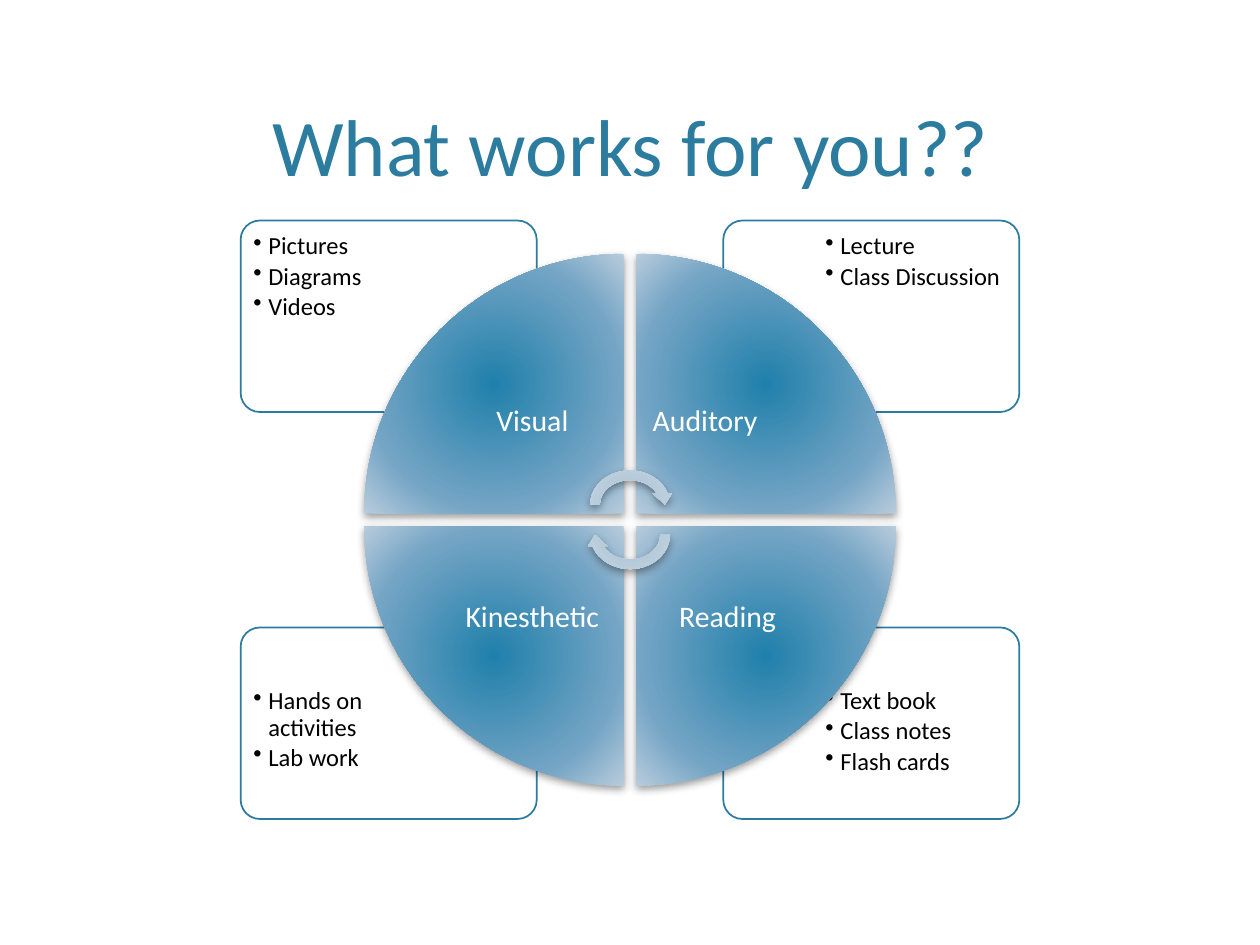
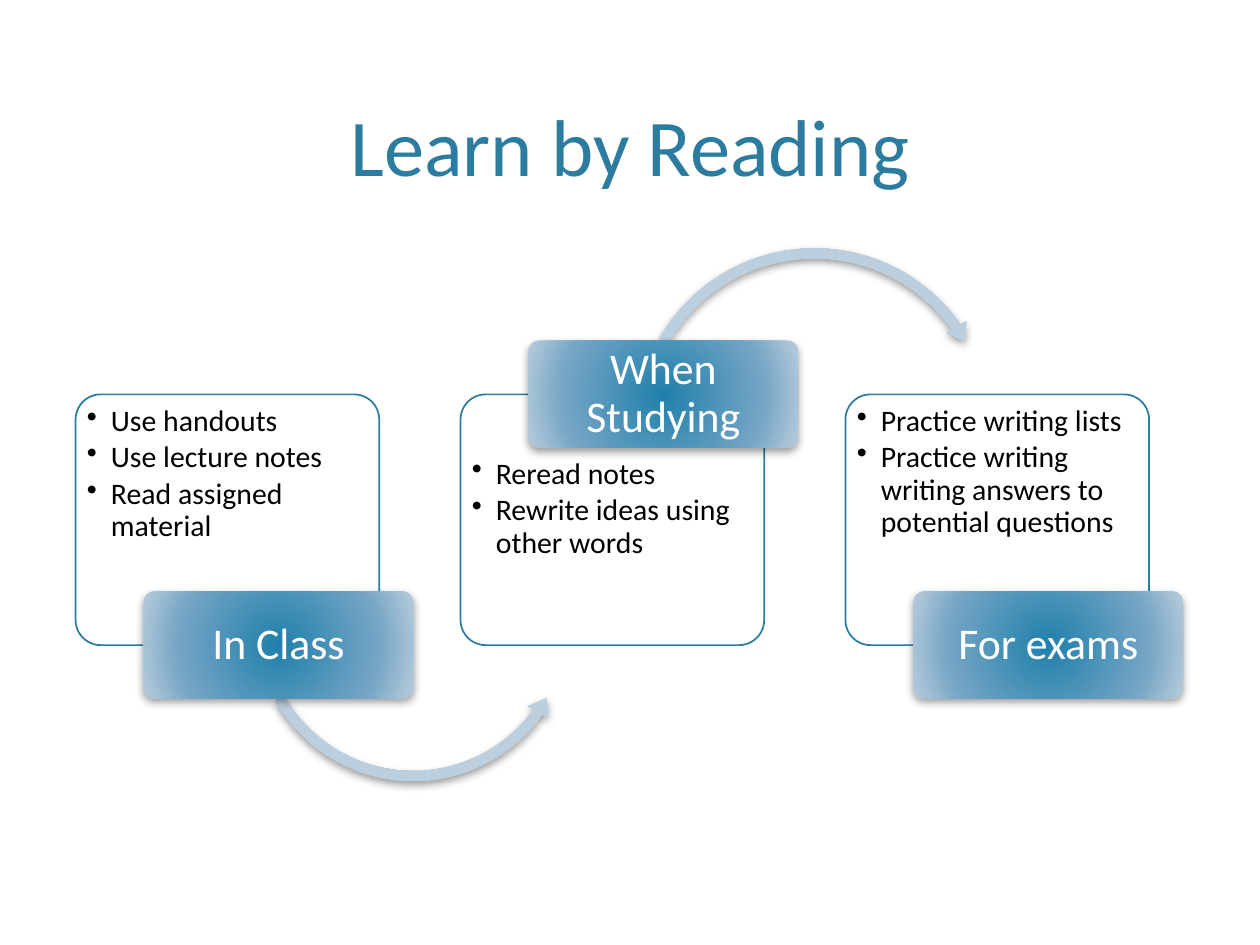
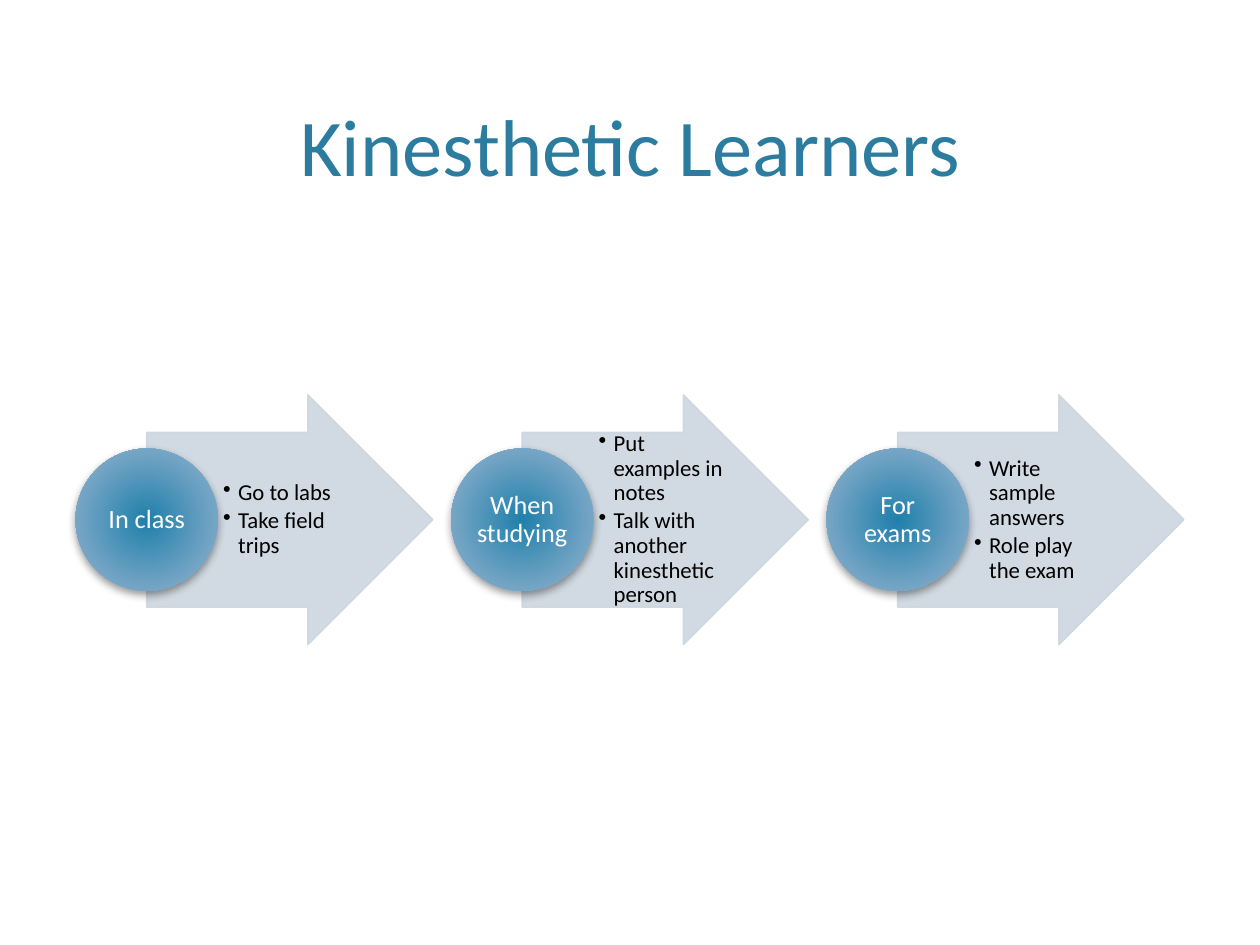
import pptx
import pptx.dml.color
import pptx.enum.shapes
import pptx.enum.text
import pptx.oxml
import pptx.oxml.ns
import pptx.util

SHAPES = pptx.enum.shapes.MSO_SHAPE
ALIGN = pptx.enum.text.PP_ALIGN
ANCHOR = pptx.enum.text.MSO_ANCHOR

STYLES_TITLE = "What works for you??"
STYLES = [
    {"name": "Visual", "side": (0, 0), "turn": 0, "align": ALIGN.CENTER,
     "points": ["Pictures", "Diagrams", "Videos"]},
    {"name": "Auditory", "side": (1, 0), "turn": 90, "align": ALIGN.LEFT,
     "points": ["Lecture", "Class Discussion"]},
    {"name": "Kinesthetic", "side": (0, 1), "turn": 270, "align": ALIGN.CENTER,
     "points": ["Hands on activities", "Lab work"]},
    {"name": "Reading", "side": (1, 1), "turn": 180, "align": ALIGN.CENTER,
     "points": ["Text book", "Class notes", "Flash cards"]},
]

READING_TITLE = "Learn by Reading"
READING_STEPS = [
    {"name": "In Class", "tag_on_top": False,
     "points": ["Use handouts", "Use lecture notes", "Read assigned material"],
     "loop": (SHAPES.LEFT_CIRCULAR_ARROW, (1.97, 3.63, 2.62, 2.62),
              (0.03, 3.69, 21.45, 90.25, 0.035))},
    {"name": "When Studying", "tag_on_top": True,
     "points": ["Reread notes", "Rewrite ideas using other words"],
     "loop": (SHAPES.CIRCULAR_ARROW, (5, 1.92, 2.93, 2.93),
              (0.027, 3.28, 194.97, 125.76, 0.031))},
    {"name": "For exams", "tag_on_top": False,
     "points": ["Practice writing lists",
                "Practice writing writing answers to potential questions"],
     "loop": None},
]

KINESTHETIC_TITLE = "Kinesthetic Learners"
KINESTHETIC_STEPS = [
    ("In class", ["Go to labs", "Take field trips"]),
    ("When studying", ["Put examples in notes", "Talk with another kinesthetic person"]),
    ("For exams", ["Write sample answers", "Role play the exam"]),
]

THEME = {
    "font": "Calibri",
    "accent": "2C7C9F",
    "ink": "000000",
    "paper": "FFFFFF",
    "pale": "CDD7DF",
    "deep_glow": [(0, "2080AB"), (69, "75A5C5"), (100, "B8CCDC")],
    "pale_glow": [(0, "AABFD0"), (69, "BCCFDE"), (100, "D8E2EB")],
    "title_size": 46,
    "wheel": {"label": 17, "list": 14},
    "steps": {"label": 25, "list": 17},
    "arrows": {"label": 15, "list": 13},
}
WIDTH, HEIGHT = 10, 7.5
MARGIN = 0.6


def rgb(value):
    return pptx.dml.color.RGBColor.from_string(value)


def inches(box):
    return [pptx.util.Inches(length) for length in box]


def assign(target, values):
    for key, value in values.items():
        setattr(target, key, value)


def xml(tag, attributes="", inner=""):
    return pptx.oxml.parse_xml(
        f'<a:{tag} {pptx.oxml.ns.nsdecls("a")} {attributes}>{inner}</a:{tag}>')


def style_font(paragraph, size, color):
    assign(paragraph.font, {"size": pptx.util.Pt(size), "name": THEME["font"]})
    paragraph.font.color.rgb = rgb(color)


def titled_slide(deck, title):
    slide = deck.slides.add_slide(deck.slide_layouts[5])
    heading = slide.shapes.title
    assign(heading, dict(zip(("left", "top", "width", "height"),
                             inches((MARGIN, 0.12, WIDTH - 2 * MARGIN, 1.46)))))
    heading.text_frame.text = title
    heading.text_frame.vertical_anchor = ANCHOR.BOTTOM
    heading.text_frame.paragraphs[0].alignment = ALIGN.CENTER
    style_font(heading.text_frame.paragraphs[0], THEME["title_size"], THEME["accent"])
    return slide


def add_form(slide, kind, box, adjustments=()):
    form = slide.shapes.add_shape(kind, *inches(box))
    form.shadow.inherit = False
    for index, value in enumerate(adjustments):
        form.adjustments[index] = value
    return form


def add_flat(slide, kind, box, adjustments, fill, line, line_alpha=100):
    form = add_form(slide, kind, box, adjustments)
    form.fill.solid()
    form.fill.fore_color.rgb = rgb(fill)
    form.line.color.rgb = rgb(line)
    form.line.width = pptx.util.Pt(1)
    colors = form._element.spPr.iter(pptx.oxml.ns.qn("a:srgbClr"))
    for color, alpha in zip(list(colors), (90, line_alpha)):
        color.append(xml("alpha", f'val="{alpha * 1000}"'))


def add_glowing(slide, kind, box, glow, adjustments=(), turn=0):
    form = add_form(slide, kind, box, adjustments)
    form.rotation = turn
    form.line.fill.background()
    form.fill.background()
    properties = form._element.spPr
    stops = "".join(f'<a:gs pos="{at * 1000}"><a:srgbClr val="{color}"/></a:gs>'
                    for at, color in THEME[glow])
    target = " ".join(f'{edge}="100000"' for edge in "ltrb")
    gradient = xml("gradFill", 'rotWithShape="1"',
                   f'<a:gsLst>{stops}</a:gsLst><a:path path="circle">'
                   f'<a:fillToRect {target}/></a:path>')
    properties.replace(properties.find(pptx.oxml.ns.qn("a:noFill")), gradient)
    properties.find(pptx.oxml.ns.qn("a:effectLst")).append(xml(
        "outerShdw", 'blurRad="63500" dist="25400" dir="5400000" rotWithShape="0"',
        f'<a:srgbClr val="{THEME["ink"]}"><a:alpha val="40000"/></a:srgbClr>'))


def add_text(slide, box, lines, size, color, insets, anchor, align):
    frame = slide.shapes.add_textbox(*inches(box)).text_frame
    assign(frame, {"word_wrap": True, "vertical_anchor": anchor})
    sides = ("margin_left", "margin_top", "margin_right", "margin_bottom")
    assign(frame, dict(zip(sides, inches(insets))))
    frame.text = "\n".join(lines)
    for paragraph in frame.paragraphs:
        assign(paragraph, {"alignment": align, "line_spacing": 0.9})
        style_font(paragraph, size, color)
    return frame


def add_label(slide, box, name, size, insets, align=ALIGN.CENTER):
    add_text(slide, box, [name], size, THEME["paper"], insets, ANCHOR.MIDDLE, align)


def add_list(slide, box, points, size, insets, indent, anchor=ANCHOR.TOP):
    frame = add_text(slide, box, points, size, THEME["ink"], insets, anchor, ALIGN.LEFT)
    hang = pptx.util.Inches(indent)
    for paragraph in frame.paragraphs:
        paragraph.space_after = pptx.util.Pt(size * 0.15)
        properties = paragraph._p.get_or_add_pPr()
        properties.set("marL", str(hang))
        properties.set("indent", str(-hang))
        properties.insert_element_before(xml("buChar", 'char="•"'), "a:tabLst", "a:defRPr")


def add_card(slide, box):
    add_flat(slide, SHAPES.ROUNDED_RECTANGLE, box, (0.1,), THEME["paper"], THEME["accent"])


def build_wheel(deck):
    slide = titled_slide(deck, STYLES_TITLE)
    hub = (WIDTH / 2, HEIGHT * 0.55)
    sizes = THEME["wheel"]

    def around_hub(side, gaps, extent):
        corner = [middle + gap if far else middle - gap - length
                  for middle, far, gap, length in zip(hub, side, gaps, extent)]
        return (*corner, *extent)

    for style in reversed(STYLES):
        add_card(slide, around_hub(style["side"], (0.74, 0.855), (2.35, 1.52)))
        add_list(slide, around_hub(style["side"], (1.48, 1.27), (1.58, 1.07)),
                 style["points"], sizes["list"], (0.07,) * 4, 0.12)
    for style in STYLES:
        add_glowing(slide, SHAPES.PIE_WEDGE,
                    around_hub(style["side"], (0.05, 0.05), (2.06, 2.06)),
                    "deep_glow", turn=style["turn"])
        add_label(slide, around_hub(style["side"], (0.05, 0.05), (1.45, 1.45)),
                  style["name"], sizes["label"], (0.13,) * 4, style["align"])
    width, height = 0.71, 0.62
    for shift, turn in ((-0.12, 0), (0.12, 180)):
        box = (hub[0] - width / 2, hub[1] + shift - height / 2, width, height)
        add_glowing(slide, SHAPES.CIRCULAR_ARROW, box, "pale_glow", turn=turn)


def build_reading(deck):
    slide = titled_slide(deck, READING_TITLE)
    top, width, height, pitch = 3.13, 2.41, 1.99, 3.055
    tag_width, tag_height = 2.14, 0.85
    sizes = THEME["steps"]
    for column, step in enumerate(READING_STEPS):
        left = MARGIN + column * pitch
        edge = top if step["tag_on_top"] else top + height
        list_top = top + (0.47 if step["tag_on_top"] else 0.05)
        tag = (left + 0.54, edge - tag_height / 2, tag_width, tag_height)
        add_card(slide, (left, top, width, height))
        add_list(slide, (left + 0.05, list_top, 2.32, 1.47), step["points"],
                 sizes["list"], (0.04,) * 4, 0.19)
        if step["loop"]:
            kind, box, adjustments = step["loop"]
            add_glowing(slide, kind, box, "pale_glow", adjustments)
        add_glowing(slide, SHAPES.ROUNDED_RECTANGLE, tag, "deep_glow", (0.1,))
        add_label(slide, tag, step["name"], sizes["label"], (0.07, 0.05, 0.07, 0.05))


def build_kinesthetic(deck):
    slide = titled_slide(deck, KINESTHETIC_TITLE)
    pitch, middle, disc = 2.98, HEIGHT * 0.55, 1.13
    sizes = THEME["arrows"]

    def centred(left, width, height):
        return (left, middle - height / 2, width, height)

    for column, (name, points) in enumerate(KINESTHETIC_STEPS):
        left = MARGIN + column * pitch
        add_flat(slide, SHAPES.RIGHT_ARROW, centred(left + disc / 2, 2.27, 1.98),
                 (0.7, 0.5), THEME["pale"], THEME["pale"], 90)
        add_list(slide, centred(left + disc, 1.11, 1.39), points, sizes["list"],
                 (0.04, 0.01, 0.02, 0.01), 0.12, ANCHOR.MIDDLE)
        add_glowing(slide, SHAPES.OVAL, centred(left, disc, disc), "deep_glow")
        add_label(slide, centred(left + 0.165, 0.8, 0.8), name, sizes["label"], (0.01,) * 4)


def main():
    deck = pptx.Presentation()
    assign(deck, {"slide_width": pptx.util.Inches(WIDTH),
                  "slide_height": pptx.util.Inches(HEIGHT)})
    for build in (build_wheel, build_reading, build_kinesthetic):
        build(deck)
    deck.save("out.pptx")


if __name__ == "__main__":
    main()
